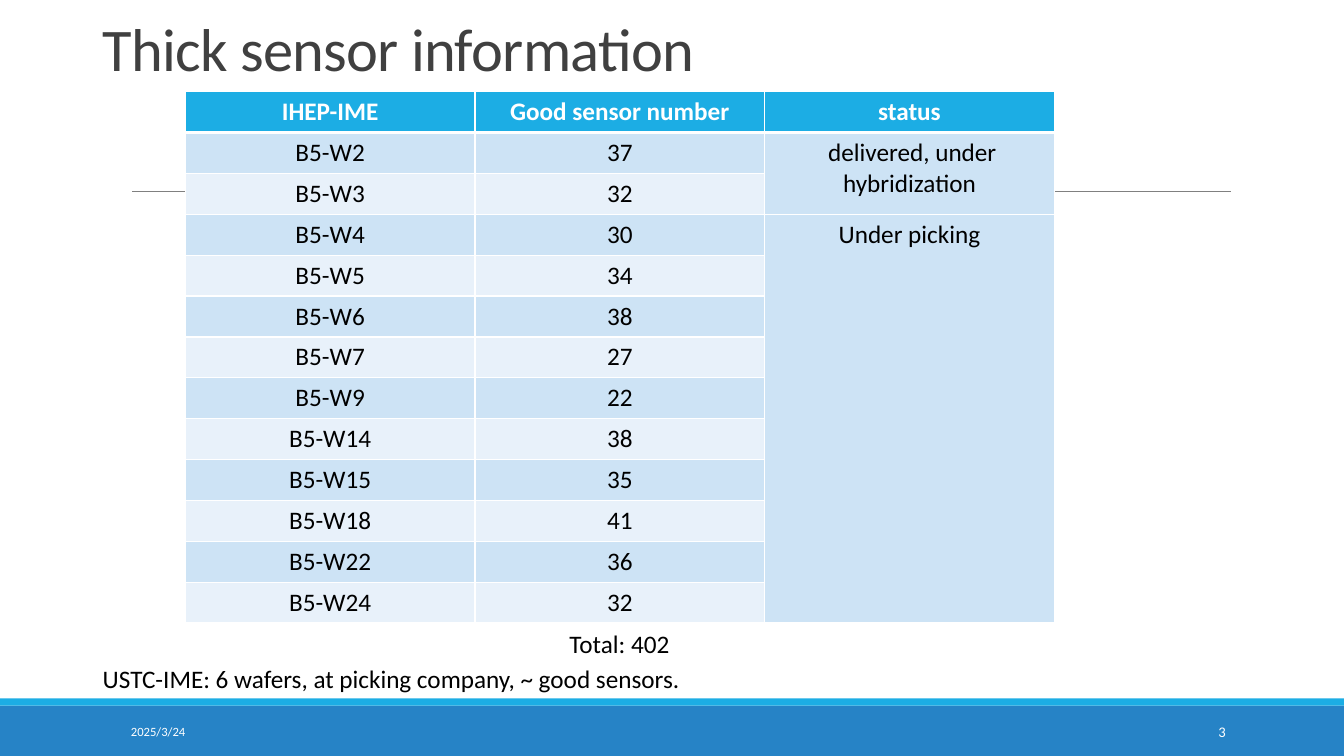
import dataclasses
import typing

import pptx
import pptx.dml.color
import pptx.enum.shapes
import pptx.enum.text
import pptx.oxml
import pptx.oxml.ns
import pptx.util

Cm = pptx.util.Cm
Pt = pptx.util.Pt
ALIGN = pptx.enum.text.PP_ALIGN
ANCHOR = pptx.enum.text.MSO_ANCHOR

COLORS = {
    "white": "FFFFFF",
    "black": "000000",
    "title": "404040",
    "rule": "808080",
    "footer": "2683C6",
    "accent": "1CADE4",
    "odd_row": "CDE3F5",
    "even_row": "E8F1FA",
}
FONT = "Calibri"
SLIDE_WIDTH, SLIDE_HEIGHT = 33.87, 19.05


@dataclasses.dataclass
class Band:
    top: float
    height: float
    color: str


@dataclasses.dataclass
class Label:
    text: str
    left: float
    top: float
    width: float
    height: float
    style: dict[str, typing.Any]
    anchor: typing.Any = ANCHOR.TOP
    wrap: bool = True


@dataclasses.dataclass
class Status:
    text: str
    first_row: int
    last_row: int


BANDS = [Band(17.78, 1.27, "footer"), Band(17.6, 0.18, "accent")]

LABELS = [
    Label("Thick sensor information", 2.34, 1.02, 29.21, 1.22,
          dict(size=43.2, color="title", line_spacing=0.85, tracking=-0.5), ANCHOR.BOTTOM),
    Label("2025/3/24", 3.05, 17.93, 6.86, 1.02, dict(size=9, color="white"), ANCHOR.MIDDLE),
    Label("3", 27.51, 17.93, 3.63, 1.02,
          dict(size=10.5, color="white", align=ALIGN.RIGHT), ANCHOR.MIDDLE),
    Label("Total: 402", 14.1, 15.7, 3.07, 1.02, {}, wrap=False),
    Label("USTC-IME: 6 wafers, at picking company, ~ good sensors.",
          2.34, 16.59, 15.21, 1.02, {}, wrap=False),
]

HEADINGS = ["IHEP-IME", "Good sensor number", "status"]
GOOD_SENSORS = {
    "B5-W2": 37, "B5-W3": 32, "B5-W4": 30, "B5-W5": 34, "B5-W6": 38, "B5-W7": 27,
    "B5-W9": 22, "B5-W14": 38, "B5-W15": 35, "B5-W18": 41, "B5-W22": 36, "B5-W24": 32,
}
STATUSES = [Status(" delivered, under hybridization", 1, 2), Status("Under picking", 3, 12)]
TABLE_LEFT, TABLE_TOP = 4.67, 2.31
COLUMN_WIDTH, ROW_HEIGHT = 7.3, 1.03


def rgb(color: str) -> pptx.dml.color.RGBColor:
    return pptx.dml.color.RGBColor.from_string(COLORS[color])


def write(frame, text: str, *, size: float = 18, color: str = "black", bold: bool = False,
          align=ALIGN.LEFT, line_spacing: float | None = None, tracking: float = 0) -> None:
    paragraph = frame.paragraphs[0]
    paragraph.alignment = align
    paragraph.line_spacing = line_spacing
    run = paragraph.add_run()
    run.text = text
    run.font.name = FONT
    run.font.size = Pt(size)
    run.font.bold = bold
    run.font.color.rgb = rgb(color)
    if tracking:
        run.font._element.set("spc", str(round(tracking * 100)))


def add_band(slide, band: Band) -> None:
    bar = slide.shapes.add_shape(pptx.enum.shapes.MSO_SHAPE.RECTANGLE, Cm(0), Cm(band.top),
                                 Cm(SLIDE_WIDTH), Cm(band.height))
    bar.shadow.inherit = False
    bar.fill.solid()
    bar.fill.fore_color.rgb = rgb(band.color)
    bar.line.fill.background()


def add_title_rule(slide) -> None:
    rule = slide.shapes.add_connector(pptx.enum.shapes.MSO_CONNECTOR.STRAIGHT,
                                      Cm(3.33), Cm(4.83), Cm(31.01), Cm(4.83))
    rule.line.color.rgb = rgb("rule")
    rule.line.width = Pt(0.5)
    properties = rule._element.spPr
    properties.append(properties.makeelement(pptx.oxml.ns.qn("a:effectLst"), {}))


def add_label(slide, label: Label) -> None:
    box = slide.shapes.add_textbox(Cm(label.left), Cm(label.top), Cm(label.width), Cm(label.height))
    frame = box.text_frame
    frame.word_wrap = label.wrap
    frame.vertical_anchor = label.anchor
    if not label.wrap:
        frame.auto_size = pptx.enum.text.MSO_AUTO_SIZE.SHAPE_TO_FIT_TEXT
    write(frame, label.text, **label.style)


def style_cell(cell, fill: str, top: float, bottom: float) -> None:
    cell.fill.solid()
    cell.fill.fore_color.rgb = rgb(fill)
    properties = cell._tc.get_or_add_tcPr()
    borders = {"lnL": 1, "lnR": 1, "lnT": top, "lnB": bottom}
    for position, (side, width) in enumerate(borders.items()):
        properties.insert(position, pptx.oxml.parse_xml(
            f'<a:{side} {pptx.oxml.ns.nsdecls("a")} w="{Pt(width)}"><a:solidFill>'
            f'<a:srgbClr val="{COLORS["white"]}"/></a:solidFill></a:{side}>'))


def row_fill(row: int, column: int) -> str:
    if row == 0:
        return "accent"
    return "odd_row" if row % 2 or column == 2 else "even_row"


def add_sensor_table(slide) -> None:
    row_count, column_count = len(GOOD_SENSORS) + 1, len(HEADINGS)
    sensors = slide.shapes.add_table(
        row_count, column_count, Cm(TABLE_LEFT), Cm(TABLE_TOP),
        Cm(COLUMN_WIDTH * column_count), Cm(ROW_HEIGHT * row_count)).table
    sensors.horz_banding = False
    for column in sensors.columns:
        column.width = Cm(COLUMN_WIDTH)
    for row in sensors.rows:
        row.height = Cm(ROW_HEIGHT)

    # Fills and borders, with a heavy line under the headings
    for row in range(row_count):
        for column in range(column_count):
            style_cell(sensors.cell(row, column), row_fill(row, column),
                       top=3 if row == 1 else 1, bottom=3 if row == 0 else 1)

    # Headings, wafers and merged statuses
    for column, heading in enumerate(HEADINGS):
        write(sensors.cell(0, column).text_frame, heading,
              color="white", bold=True, align=ALIGN.CENTER)
    for row, wafer_count in enumerate(GOOD_SENSORS.items(), start=1):
        for column, value in enumerate(wafer_count):
            write(sensors.cell(row, column).text_frame, str(value), align=ALIGN.CENTER)
    for status in STATUSES:
        cell = sensors.cell(status.first_row, 2)
        cell.merge(sensors.cell(status.last_row, 2))
        write(cell.text_frame, status.text, align=ALIGN.CENTER)


def main() -> None:
    presentation = pptx.Presentation()
    presentation.slide_width = Cm(SLIDE_WIDTH)
    presentation.slide_height = Cm(SLIDE_HEIGHT)
    slide = presentation.slides.add_slide(presentation.slide_layouts[6])

    # Background bands and rule
    for band in BANDS:
        add_band(slide, band)
    add_title_rule(slide)

    # Content
    add_sensor_table(slide)
    for label in LABELS:
        add_label(slide, label)

    presentation.save("out.pptx")


if __name__ == "__main__":
    main()
